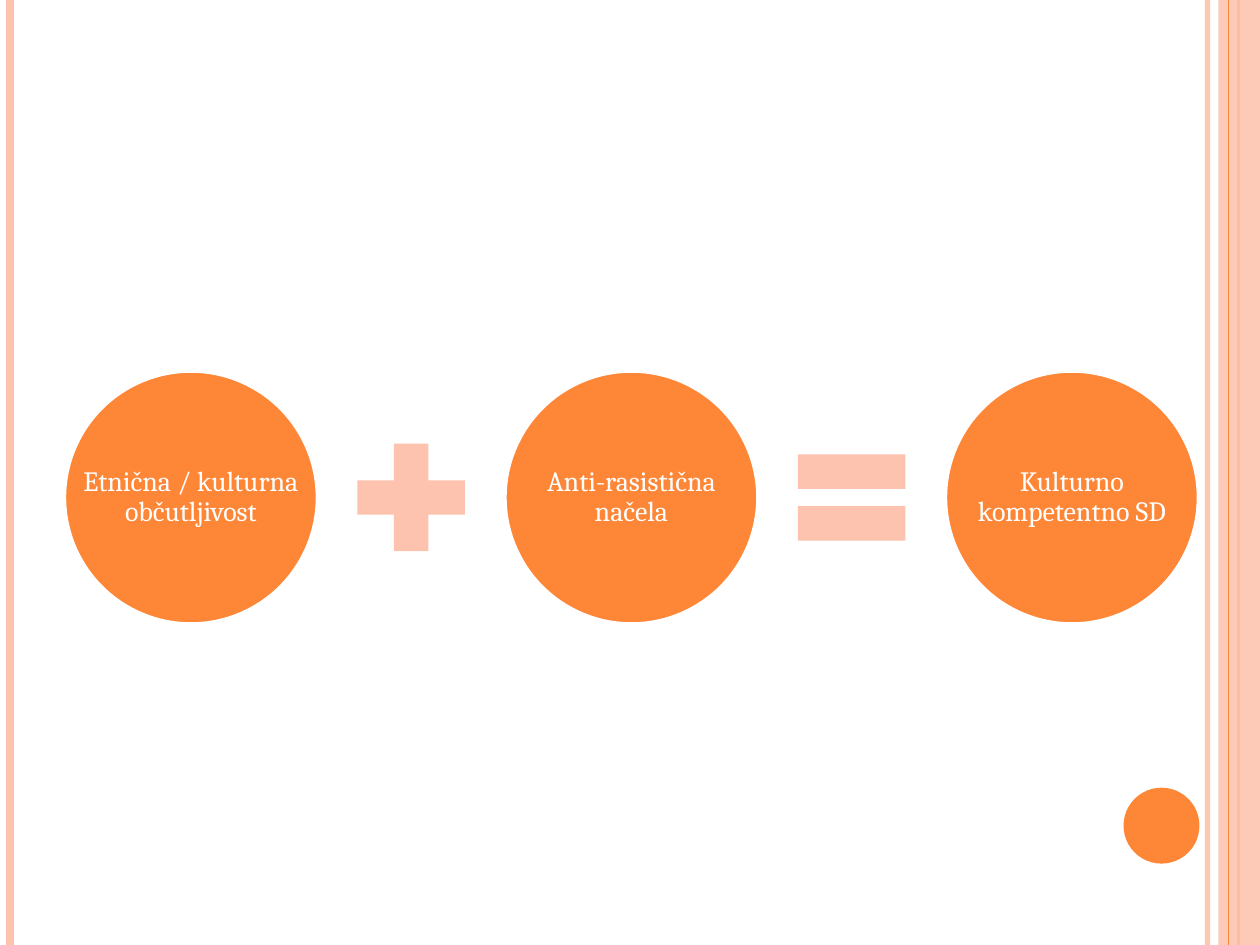
from lxml import etree
from pptx import Presentation
from pptx.dml.color import RGBColor
from pptx.enum.shapes import MSO_CONNECTOR, MSO_SHAPE
from pptx.enum.text import MSO_ANCHOR, PP_ALIGN
from pptx.oxml.ns import qn
from pptx.util import Cm, Pt

OVAL, RECT = MSO_SHAPE.OVAL, MSO_SHAPE.RECTANGLE
PLUS, EQUAL = MSO_SHAPE.MATH_PLUS, MSO_SHAPE.MATH_EQUAL
LINE = MSO_CONNECTOR.STRAIGHT
CENTER, MIDDLE = PP_ALIGN.CENTER, MSO_ANCHOR.MIDDLE

COLORS = {"orange": "FE8637", "peach": "FEC3AE", "white": "FFFFFF"}
WIDE, HIGH = 25.4, 19.05


def color(name):
    return RGBColor.from_string(COLORS[name])


def fade(fill, alpha):
    """Set the opacity of a solid fill, in percent."""
    tag = next(fill.iter(qn("a:srgbClr")))
    etree.SubElement(tag, qn("a:alpha")).set("val", str(alpha * 1000))


def write(frame, text, size=16, font="Cambria", tint="white", space=0.9):
    para = frame.paragraphs[0]
    para.alignment = CENTER
    para.line_spacing = space
    run = para.add_run()
    run.text = text
    run.font.size = Pt(size)
    run.font.name = font
    run.font.color.rgb = color(tint)


class Page:
    def __init__(self, slide):
        self.slide = slide
        self.shapes = slide.shapes

    def stripe(self, x, tint, width, alpha=None):
        line = self.shapes.add_connector(LINE, Cm(x), Cm(0), Cm(x), Cm(HIGH))
        line.line.color.rgb = color(tint)
        line.line.width = Pt(width)
        props = line.element.spPr
        if alpha:
            fade(props, alpha)
        etree.SubElement(props, qn("a:effectLst"))

    def shape(self, kind, x, y, w, h, tint, edge=None, alpha=None):
        item = self.shapes.add_shape(kind, Cm(x), Cm(y), Cm(w), Cm(h))
        item.shadow.inherit = False
        item.fill.solid()
        item.fill.fore_color.rgb = color(tint)
        if alpha:
            fade(item.element.spPr, alpha)
        if edge:
            item.line.color.rgb = color(edge)
            item.line.width = Pt(2)
        else:
            item.line.fill.background()

    def label(self, text, x, y, w, h):
        frame = self.shapes.add_textbox(Cm(x), Cm(y), Cm(w), Cm(h)).text_frame
        frame.word_wrap = True
        frame.vertical_anchor = MIDDLE
        frame.margin_left = frame.margin_right = Cm(0.25)
        frame.margin_top = frame.margin_bottom = Cm(0.05)
        write(frame, text)


def main():
    deck = Presentation()
    deck.slide_width, deck.slide_height = Cm(WIDE), Cm(HIGH)
    page = Page(deck.slides.add_slide(deck.slide_layouts[6]))

    # Side stripes and corner dot
    page.stripe(24.34, "peach", 3, alpha=93)
    page.stripe(0.21, "peach", 4.5)
    page.stripe(24.97, "orange", 1.5)
    page.shape(RECT, 24.56, 0, WIDE - 24.56, HIGH, "peach", alpha=87)
    page.stripe(24.77, "orange", 0.75)
    page.shape(OVAL, 22.65, 15.88, 1.53, 1.53, "orange")

    # Equation: circles with a sign halfway between neighbours
    left, mid, step = 1.3, 10.03, 8.88
    disc, sign = 5.1, 2.95
    terms = [
        ("Etnična / kulturna občutljivost", PLUS),
        ("Anti-rasistična načela", EQUAL),
        ("Kulturno kompetentno SD", None),
    ]
    for i, (text, mark) in enumerate(terms):
        x = left + i * step
        box = (x, mid - disc / 2, disc, disc)
        page.shape(OVAL, *box, "orange", edge="white")
        page.label(text, *box)
        if mark:
            gap = x + (disc + step - sign) / 2
            page.shape(mark, gap, mid - sign / 2, sign, sign, "peach")

    deck.save("out.pptx")


if __name__ == "__main__":
    main()
